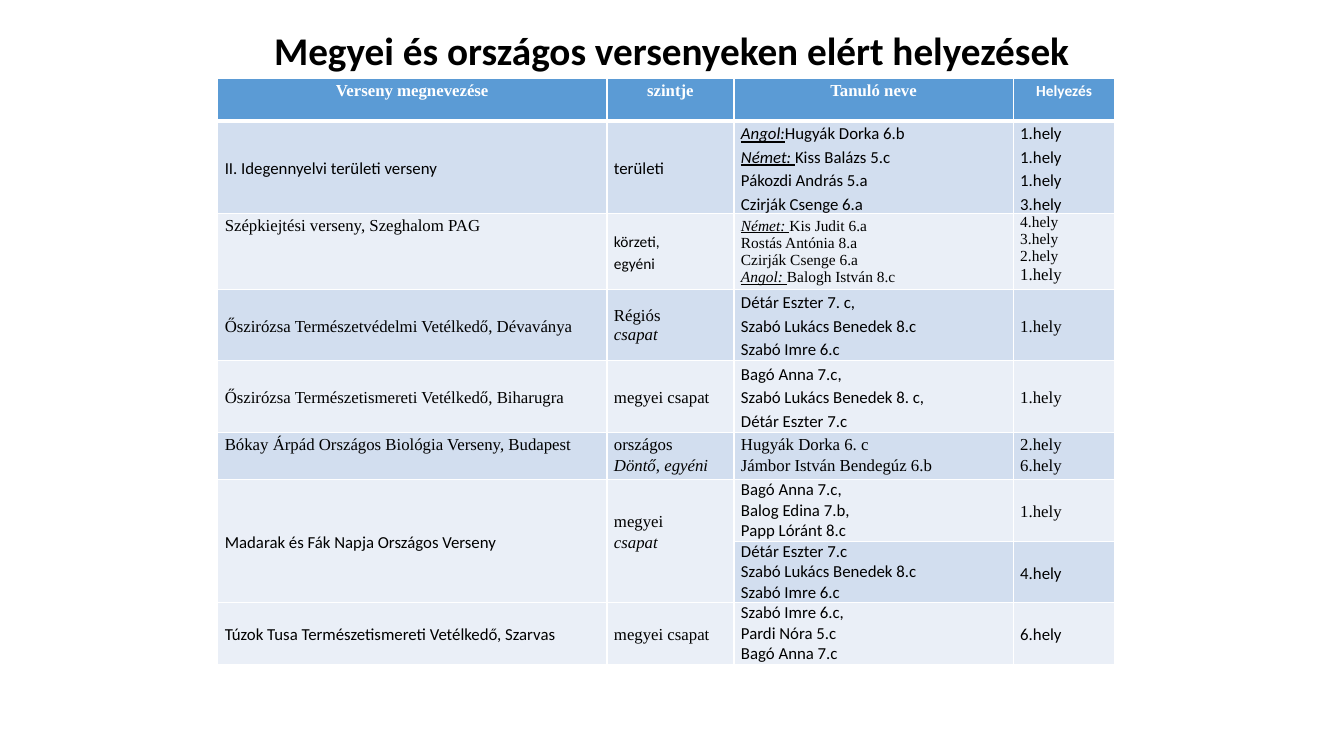
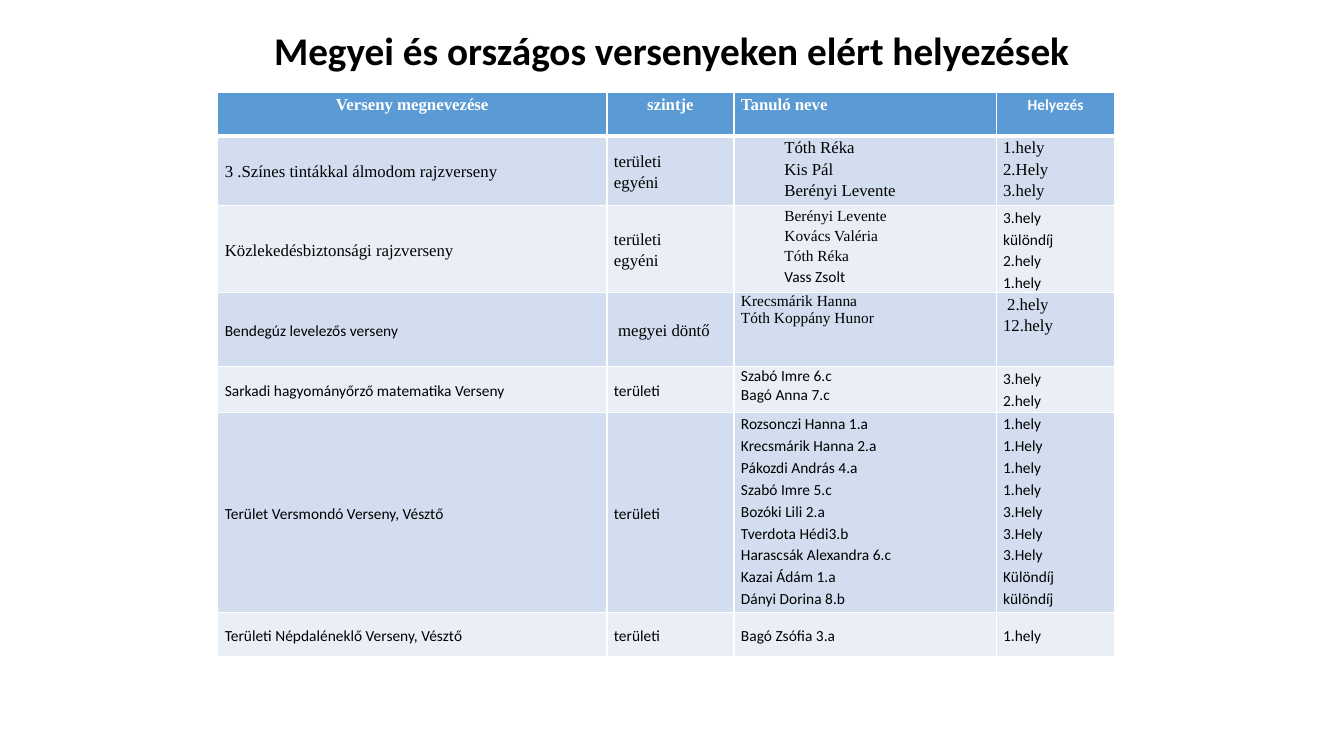
import dataclasses

import pptx
import pptx.dml.color
import pptx.enum.text
import pptx.oxml
import pptx.oxml.ns
import pptx.presentation
import pptx.slide
import pptx.table
import pptx.text.text
import pptx.util

Inches = pptx.util.Inches
Pt = pptx.util.Pt
ALIGN = pptx.enum.text.PP_ALIGN
ANCHOR = pptx.enum.text.MSO_ANCHOR

SANS, SERIF = "Calibri", "Times New Roman"
BLACK, WHITE, BLUE = "000000", "FFFFFF", "5B9BD5"
BANDS = ("EAEFF7", "D2DEEF")
TITLE = "Megyei és országos versenyeken elért helyezések"
LEFT, WIDTH = 2.16, 8.9
PAD = 0.07


@dataclasses.dataclass(frozen=True)
class Run:
    text: str
    italic: bool = False
    under: bool = False


@dataclasses.dataclass(frozen=True)
class Line:
    """One paragraph; font and size override those of its cell."""
    runs: tuple[Run, ...]
    font: str | None = None
    size: int | None = None
    left: float = 0


@dataclasses.dataclass(frozen=True)
class Cell:
    lines: tuple[Line, ...]
    font: str
    size: int = 12
    mid: bool = True
    gap: float = 1.15
    left: float = PAD
    foot: float = 0
    center: bool = False
    rows: int = 1


@dataclasses.dataclass(frozen=True)
class Grid:
    top: float
    cols: tuple[float, ...]
    rows: tuple[float, ...]
    cells: list[tuple[Cell | None, ...]]


def plain(text: str, **extra) -> Line:
    return Line((Run(text),), **extra)


def slant(text: str) -> Line:
    return Line((Run(text, italic=True),))


def tagged(tag: str, name: str) -> Line:
    """A name after an underlined subject."""
    return Line((Run(tag, italic=True, under=True), Run(name)))


def cell(font: str, lines: tuple[str | Line, ...], extra: dict) -> Cell:
    done = tuple(plain(ln) if isinstance(ln, str) else ln for ln in lines)
    return Cell(done, font, **extra)


def sans(*lines: str | Line, **extra) -> Cell:
    return cell(SANS, lines, extra)


def serif(*lines: str | Line, **extra) -> Cell:
    return cell(SERIF, lines, extra)


def small(*lines: str | Line, **extra) -> Cell:
    return sans(*lines, size=11, **extra)


def rgb(color: str) -> pptx.dml.color.RGBColor:
    return pptx.dml.color.RGBColor.from_string(color)


def style(para: pptx.text.text._Paragraph, font: str, size: int,
          color: str, bold: bool) -> None:
    para.font.name = font
    para.font.size = Pt(size)
    para.font.bold = bold
    para.font.color.rgb = rgb(color)


def edge(box: pptx.table._Cell, widths: dict[str, int]) -> None:
    """Draw white borders, widths in points by side."""
    props = box._tc.get_or_add_tcPr()
    space = pptx.oxml.ns.nsdecls("a")
    for side, width in widths.items():
        props.append(pptx.oxml.parse_xml(
            f'<a:ln{side} {space} w="{Pt(width)}"><a:solidFill>'
            f'<a:srgbClr val="{WHITE}"/></a:solidFill></a:ln{side}>'))


def write(box: pptx.table._Cell, item: Cell, head: bool) -> None:
    box.margin_left, box.margin_right = Inches(item.left), Inches(PAD)
    box.margin_top, box.margin_bottom = 0, Inches(item.foot)
    box.vertical_anchor = ANCHOR.MIDDLE if item.mid else ANCHOR.TOP
    frame = box.text_frame
    for num, line in enumerate(item.lines):
        para = frame.add_paragraph() if num else frame.paragraphs[0]
        para.alignment = ALIGN.CENTER if item.center else ALIGN.LEFT
        para.line_spacing = item.gap
        if line.left:
            para._p.get_or_add_pPr().set("marL", str(Inches(line.left)))
        style(para, line.font or item.font, line.size or item.size,
              WHITE if head else BLACK, head)
        for part in line.runs:
            run = para.add_run()
            run.text = part.text
            if part.italic:
                run.font.italic = True
            if part.under:
                run.font.underline = True


def title(slide: pptx.slide.Slide) -> None:
    box = slide.shapes.add_textbox(
        Inches(LEFT), Inches(0.21), Inches(9), Inches(0.54))
    box.text_frame.word_wrap = True
    para = box.text_frame.paragraphs[0]
    para.text = TITLE
    para.alignment = ALIGN.CENTER
    style(para, SANS, 28, BLACK, True)


def draw(slide: pptx.slide.Slide, grid: Grid) -> None:
    table = slide.shapes.add_table(
        len(grid.rows), len(grid.cols), Inches(LEFT), Inches(grid.top),
        Inches(WIDTH), Inches(sum(grid.rows))).table
    table.first_row = table.horz_banding = False
    for col, width in zip(table.columns, grid.cols):
        col.width = Inches(width)
    for row, height in zip(table.rows, grid.rows):
        row.height = Inches(height)
    for y, items in enumerate(grid.cells):
        for x, item in enumerate(items):
            box = table.cell(y, x)
            edge(box, {"L": 1, "R": 1, "T": 3 if y == 1 else 1,
                       "B": 3 if y == 0 else 1})
            box.fill.solid()
            box.fill.fore_color.rgb = rgb(BANDS[y % 2] if y else BLUE)
            if item is None:
                continue
            if item.rows > 1:
                box.merge(table.cell(y + item.rows - 1, x))
            write(box, item, y == 0)


def heads(center: bool) -> tuple[Cell, ...]:
    """Header row; the flag centres the pupil column."""
    return (serif("Verseny megnevezése", mid=False, center=True),
            serif("szintje", mid=False, center=True),
            serif("Tanuló neve", mid=False, center=center),
            small("Helyezés", mid=False, center=True))


FIRST = Grid(
    0.78, (3.86, 1.26, 2.77, 1.01),
    (0.42, 0.92, 0.72, 0.71, 0.71, 0.47, 0.61, 0.61, 0.61),
    [
        heads(True),
        (sans("II. Idegennyelvi területi verseny"),
         sans("területi"),
         sans(tagged("Angol:", "Hugyák Dorka 6.b"),
              tagged("Német: ", "Kiss Balázs 5.c"),
              "Pákozdi András 5.a", "Czirják Csenge 6.a", mid=False),
         sans("1.hely", "1.hely", "1.hely", "3.hely", mid=False)),
        (serif("Szépkiejtési verseny, Szeghalom PAG", mid=False),
         small("körzeti,", "egyéni"),
         serif(tagged("Német: ", "Kis Judit 6.a"), "Rostás Antónia 8.a",
               "Czirják Csenge 6.a", tagged("Angol: ", "Balogh István 8.c"),
               size=11, gap=1),
         serif("4.hely", "3.hely", "2.hely", plain("1.hely", size=12),
               size=11, gap=1, mid=False)),
        (serif("Őszirózsa Természetvédelmi Vetélkedő, Dévaványa"),
         serif("Régiós", slant("csapat"), gap=1),
         sans("Détár Eszter 7. c,", "Szabó Lukács Benedek 8.c",
              "Szabó Imre 6.c"),
         serif("1.hely")),
        (serif("Őszirózsa Természetismereti Vetélkedő, Biharugra"),
         serif("megyei csapat"),
         sans("Bagó Anna 7.c,", "Szabó Lukács Benedek 8. c,",
              "Détár Eszter 7.c"),
         serif("1.hely")),
        (serif("Bókay Árpád Országos Biológia Verseny, Budapest", mid=False),
         serif("országos",
               Line((Run("Döntő", italic=True), Run(", "),
                     Run("egyéni", italic=True))), mid=False),
         serif("Hugyák Dorka 6. c", "Jámbor István Bendegúz 6.b", mid=False),
         serif("2.hely", "6.hely", mid=False)),
        (sans("Madarak és Fák Napja Országos Verseny", rows=2),
         serif("megyei", slant("csapat"), foot=0.21, rows=2),
         sans("Bagó Anna 7.c,", "Balog Edina 7.b,", "Papp Lóránt 8.c",
              gap=1, mid=False),
         serif("1.hely")),
        (None, None,
         sans("Détár Eszter 7.c", "Szabó Lukács Benedek 8.c",
              "Szabó Imre 6.c", gap=1, mid=False),
         sans("4.hely")),
        (sans("Túzok Tusa Természetismereti Vetélkedő, Szarvas"),
         serif("megyei csapat"),
         sans("Szabó Imre 6.c,", "Pardi Nóra 5.c", "Bagó Anna 7.c",
              gap=1, mid=False),
         sans("6.hely")),
    ])

SECOND = Grid(
    0.92, (3.86, 1.26, 2.6, 1.18),
    (0.43, 0.64, 0.86, 0.74, 0.45, 1.99, 0.43),
    [
        heads(False),
        (serif("3 .Színes tintákkal álmodom rajzverseny"),
         serif("területi", "egyéni"),
         serif("Tóth Réka", "Kis Pál", "Berényi Levente",
               left=0.5, mid=False),
         serif("1.hely", "2.Hely", "3.hely", mid=False)),
        (serif("Közlekedésbiztonsági rajzverseny"),
         serif("területi", "egyéni"),
         serif("Berényi Levente", "Kovács Valéria", "Tóth Réka",
               plain("Vass Zsolt", font=SANS), size=11, left=0.5, mid=False),
         small("3.hely", "különdíj", "2.hely", "1.hely", mid=False)),
        (small("Bendegúz levelezős verseny"),
         serif(plain("megyei döntő", left=0.04)),
         serif("Krecsmárik Hanna", "Tóth Koppány Hunor",
               size=11, gap=1, mid=False),
         serif(plain("2.hely", left=0.04), "12.hely", mid=False)),
        (small("Sarkadi hagyományőrző matematika Verseny"),
         small("területi"),
         small("Szabó Imre 6.c", "Bagó Anna 7.c", gap=1, mid=False),
         small("3.hely", "2.hely", mid=False)),
        (small("Terület Versmondó Verseny, Vésztő"),
         small("területi"),
         small("Rozsonczi Hanna 1.a", "Krecsmárik Hanna 2.a",
               "Pákozdi András 4.a", "Szabó Imre 5.c", "Bozóki Lili 2.a",
               "Tverdota Hédi3.b", "Harascsák Alexandra 6.c",
               "Kazai Ádám 1.a", "Dányi Dorina 8.b", mid=False),
         small("1.hely", "1.Hely", "1.hely", "1.hely", "3.Hely", "3.Hely",
               "3.Hely", "Különdíj", "különdíj", mid=False)),
        (small("Területi Népdaléneklő Verseny, Vésztő"),
         small("területi"),
         small("Bagó Zsófia 3.a"),
         small("1.hely")),
    ])


def main() -> None:
    deck = pptx.Presentation()
    deck.slide_width, deck.slide_height = Inches(13.33), Inches(7.5)
    for grid in (FIRST, SECOND):
        slide = deck.slides.add_slide(deck.slide_layouts[6])
        title(slide)
        draw(slide, grid)
    deck.save("out.pptx")


if __name__ == "__main__":
    main()
